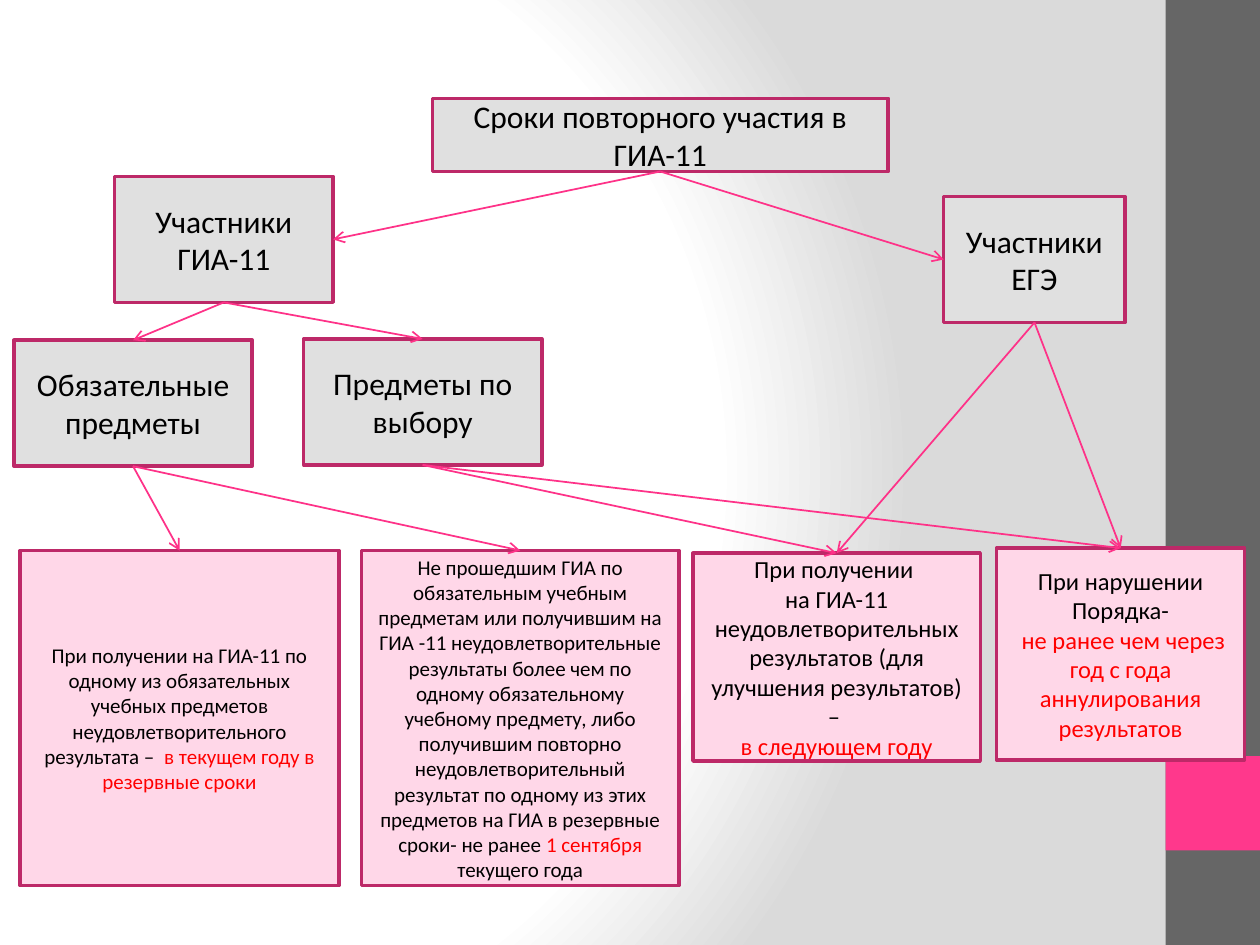
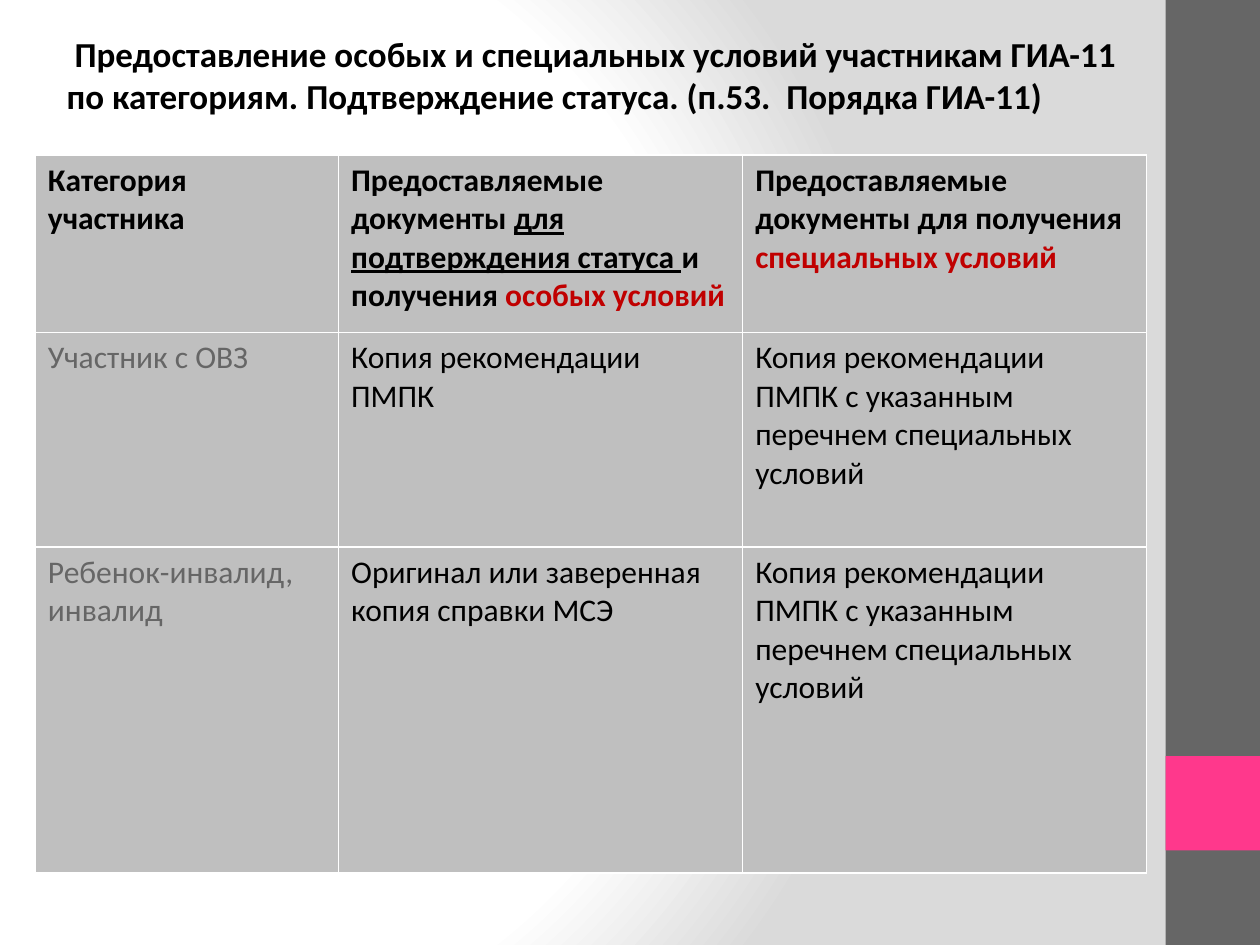
"""Builds two slides on repeat exam dates and special exam conditions."""
from lxml import etree
from pptx import Presentation
from pptx.dml.color import RGBColor
from pptx.enum.shapes import MSO_CONNECTOR as Connector, MSO_SHAPE as Shape
from pptx.enum.text import MSO_ANCHOR as Anchor, PP_ALIGN as Align
from pptx.oxml import parse_xml
from pptx.oxml.ns import nsdecls, qn
from pptx.util import Pt

BLACK = RGBColor(0x00, 0x00, 0x00)
RED = RGBColor(0xFF, 0x00, 0x00)
DARK_RED = RGBColor(0xC0, 0x00, 0x00)
DARK_GRAY = RGBColor(0x66, 0x66, 0x66)
TABLE_GRAY = RGBColor(0xBF, 0xBF, 0xBF)
BOX_GRAY = RGBColor(0xE0, 0xE0, 0xE0)
BOX_PINK = RGBColor(0xFF, 0xD7, 0xE8)
BORDER = RGBColor(0xBD, 0x29, 0x68)
ARROW = RGBColor(0xFE, 0x32, 0x88)
ACCENT = RGBColor(0xFF, 0x38, 0x8C)
FONT = "Calibri"
WIDTH, HEIGHT, BAND = 720, 540, 54
TOP, LEFT, BOTTOM, RIGHT = range(4)

GROUPS = {
    "root": ((247, 56.2, 260.6, 41.8), "Сроки повторного участия в ГИА-11"),
    "gia": ((65.5, 100.8, 124.8, 72), "Участники ГИА-11"),
    "ege": ((539.3, 112.3, 103.7, 72), "Участники ЕГЭ"),
    "required": ((8, 194.4, 136.1, 72), "Обязательные предметы"),
    "elective": ((173.5, 193.7, 136.1, 72), "Предметы по выбору"),
}
OUTCOMES = {
    "reserve": ((11.5, 314.6, 182.2, 191.5), 12, [[
        ("При получении на ГИА-11 по одному из обязательных учебных предметов "
         "неудовлетворительного результата –  ", BLACK),
        ("в текущем году в резервные сроки", RED)]]),
    "september": ((206.6, 314.6, 181.4, 191.5), 12, [[
        ("Не прошедшим ГИА по обязательным учебным предметам или получившим на "
         "ГИА -11 неудовлетворительные результаты более чем по одному "
         "обязательному учебному предмету, либо получившим повторно "
         "неудовлетворительный результат по одному из этих предметов на ГИА "
         "в резервные сроки- не ранее ", BLACK),
        ("1 сентября ", RED), ("текущего года", BLACK)]]),
    "next_year": ((396, 316.1, 164.2, 118.8), 14, [
        [("При получении ", BLACK)],
        [("на ГИА-11 неудовлетворительных результатов "
          "(для улучшения результатов) – ", BLACK)],
        [("в следующем году", RED)]]),
    "violation": ((569.5, 313.2, 141.8, 121), 14, [
        [("При нарушении Порядка-", BLACK)],
        [(" ", BLACK),
         ("не ранее чем через год с года аннулирования результатов", RED)]]),
}
LINKS = [
    ("root", "gia", RIGHT), ("root", "ege", LEFT),
    ("gia", "required", TOP), ("gia", "elective", TOP),
    ("required", "reserve", TOP), ("required", "september", TOP),
    ("elective", "next_year", TOP), ("elective", "violation", TOP),
    ("ege", "next_year", TOP), ("ege", "violation", TOP),
]

TITLE = (" Предоставление особых и специальных условий участникам ГИА-11 "
         "по категориям. Подтверждение статуса. (п.53.  Порядка ГИА-11)")
SPECIAL = "Копия рекомендации ПМПК с указанным перечнем специальных условий"
COLUMN_WIDTHS = (173.3, 230.9, 230.9)
ROW_HEIGHTS = (101.5, 122.4, 186.5)
ROWS = [
    ([("Категория участника", BLACK)],
     [("Предоставляемые документы ", BLACK),
      ("для подтверждения статуса ", BLACK, True),
      ("и получения ", BLACK), ("особых условий", DARK_RED)],
     [("Предоставляемые документы для получения ", BLACK),
      ("специальных условий", DARK_RED)]),
    ([("Участник с ОВЗ", DARK_GRAY)],
     [("Копия рекомендации ПМПК", BLACK)], [(SPECIAL, BLACK)]),
    ([("Ребенок-инвалид, инвалид", DARK_GRAY)],
     [("Оригинал или заверенная копия справки МСЭ", BLACK)],
     [(SPECIAL, BLACK)]),
]

GRADIENT = f"""<a:gradFill {nsdecls("a")} rotWithShape="1"><a:gsLst>
<a:gs pos="0"><a:srgbClr val="FFFFFF"/></a:gs>
<a:gs pos="75000"><a:srgbClr val="FFFFFF"/></a:gs>
<a:gs pos="100000"><a:srgbClr val="DADADA"/></a:gs></a:gsLst>
<a:path path="circle"><a:fillToRect l="20000" t="50000" r="100000" b="50000"/></a:path>
</a:gradFill>"""


def points(values):
    return [Pt(value) for value in values]


def write(frame, paragraphs, size, bold=False, align=Align.LEFT):
    frame.word_wrap = True
    for index, runs in enumerate(paragraphs):
        paragraph = frame.add_paragraph() if index else frame.paragraphs[0]
        paragraph.alignment = align
        for text, color, *underline in runs:
            run = paragraph.add_run()
            run.text = text
            font = run.font
            font.name, font.size, font.bold = FONT, Pt(size), bold
            font.color.rgb = color
            font.underline = bool(underline)


def add_rectangle(slide, place, fill, border=None):
    shape = slide.shapes.add_shape(Shape.RECTANGLE, *points(place))
    shape.shadow.inherit = False
    shape.fill.solid()
    shape.fill.fore_color.rgb = fill
    if border is None:
        shape.line.fill.background()
    else:
        shape.line.color.rgb = border
        shape.line.width = Pt(2)
    return shape


def add_box(slide, place, fill, paragraphs, size):
    box = add_rectangle(slide, place, fill, BORDER)
    box.text_frame.vertical_anchor = Anchor.MIDDLE
    write(box.text_frame, paragraphs, size, align=Align.CENTER)
    return box


def add_arrow(slide, start, end, side):
    arrow = slide.shapes.add_connector(Connector.STRAIGHT, 0, 0, 0, 0)
    arrow.begin_connect(start, BOTTOM)
    arrow.end_connect(end, side)
    arrow.line.color.rgb = ARROW
    arrow.line.width = Pt(1)
    etree.SubElement(arrow.line._get_or_add_ln(), qn("a:tailEnd"), type="arrow")
    etree.SubElement(arrow._element.spPr, qn("a:effectLst"))


def add_slide(presentation):
    slide = presentation.slides.add_slide(presentation.slide_layouts[6])
    slide.background.fill.gradient()
    gradient = next(slide.element.iter(qn("a:gradFill")))
    gradient.getparent().replace(gradient, parse_xml(GRADIENT))
    add_rectangle(slide, (WIDTH - BAND, 0, BAND, HEIGHT), DARK_GRAY)
    add_rectangle(slide, (WIDTH - BAND, HEIGHT - 2 * BAND, BAND, BAND), ACCENT)
    return slide


def build_dates(presentation):
    slide = add_slide(presentation)
    boxes = {}
    for name, (place, text) in GROUPS.items():
        boxes[name] = add_box(slide, place, BOX_GRAY, [[(text, BLACK)]], 18)
    for name, (place, size, paragraphs) in OUTCOMES.items():
        boxes[name] = add_box(slide, place, BOX_PINK, paragraphs, size)
    for start, end, side in LINKS:
        add_arrow(slide, boxes[start], boxes[end], side)


def build_conditions(presentation):
    slide = add_slide(presentation)
    title = slide.shapes.add_textbox(*points((31, 15.1, 635, 55.4)))
    write(title.text_frame, [[(TITLE, BLACK)]], 20, bold=True)
    place = (20.2, 88.6, sum(COLUMN_WIDTHS), sum(ROW_HEIGHTS))
    table = slide.shapes.add_table(
        len(ROWS), len(COLUMN_WIDTHS), *points(place)).table
    for column, width in zip(table.columns, COLUMN_WIDTHS):
        column.width = Pt(width)
    for row_index, (row, height) in enumerate(zip(ROWS, ROW_HEIGHTS)):
        table.rows[row_index].height = Pt(height)
        for column_index, runs in enumerate(row):
            cell = table.cell(row_index, column_index)
            cell.fill.solid()
            cell.fill.fore_color.rgb = TABLE_GRAY
            write(cell.text_frame, [runs], 18, bold=row_index == 0)


def main():
    presentation = Presentation()
    presentation.slide_width, presentation.slide_height = Pt(WIDTH), Pt(HEIGHT)
    build_dates(presentation)
    build_conditions(presentation)
    presentation.save("out.pptx")


if __name__ == "__main__":
    main()
